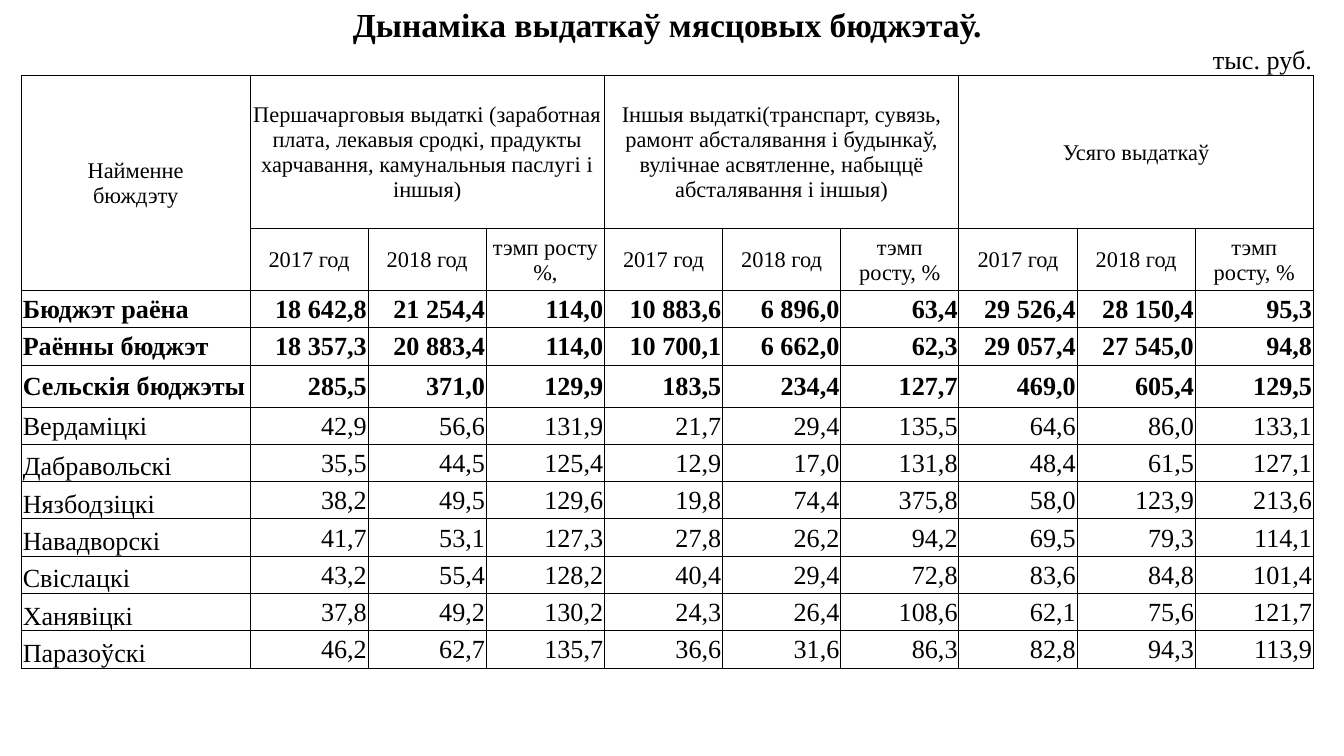
from lxml.etree import SubElement
from pptx import Presentation
from pptx.dml.color import RGBColor
from pptx.enum.text import MSO_ANCHOR, PP_ALIGN
from pptx.oxml.ns import qn
from pptx.util import Pt

COLORS = {"text": "000000", "border": "000000"}
FONT = "Times New Roman"
NO_STYLE = "{2D5ABB26-0587-4C30-8999-92F81FD0307C}"
NAME_WIDTH, VALUE_WIDTH = 122.4, 63.3
ROW_HEIGHTS = [21.6, 16.6, 82, 33.2, 20, 20, 22.5] + [20] * 7
TITLE = "Дынаміка выдаткаў мясцовых бюджэтаў."
UNIT = "тыс. руб."
NAME_HEADER = "Найменне\nбюждэту"
GROUPS = [
    "Першачарговыя выдаткі (заработная плата, лекавыя сродкі, "
    "прадукты харчавання, камунальныя паслугі і іншыя)",
    "Іншыя выдаткі(транспарт, сувязь, рамонт абсталявання і будынкаў, "
    "вулічнае асвятленне, набыццё абсталявання і іншыя)",
    "Усяго выдаткаў",
]
GROWTH = ["тэмп росту %,", "тэмп\nросту, %", "тэмп\nросту, %"]
TOTAL_ROWS = 3
BUDGETS = [
    "Бюджэт раёна|18 642,8|21 254,4|114,0|10 883,6|6 896,0|63,4|29 526,4|28 150,4|95,3",
    "Раённы бюджэт|18 357,3|20 883,4|114,0|10 700,1|6 662,0|62,3|29 057,4|27 545,0|94,8",
    "Сельскія бюджэты|285,5|371,0|129,9|183,5|234,4|127,7|469,0|605,4|129,5",
    "Вердаміцкі|42,9|56,6|131,9|21,7|29,4|135,5|64,6|86,0|133,1",
    "Дабравольскі|35,5|44,5|125,4|12,9|17,0|131,8|48,4|61,5|127,1",
    "Нязбодзіцкі|38,2|49,5|129,6|19,8|74,4|375,8|58,0|123,9|213,6",
    "Навадворскі|41,7|53,1|127,3|27,8|26,2|94,2|69,5|79,3|114,1",
    "Свіслацкі|43,2|55,4|128,2|40,4|29,4|72,8|83,6|84,8|101,4",
    "Ханявіцкі|37,8|49,2|130,2|24,3|26,4|108,6|62,1|75,6|121,7",
    "Паразоўскі|46,2|62,7|135,7|36,6|31,6|86,3|82,8|94,3|113,9",
]


def set_text(cell, text, size, align=PP_ALIGN.CENTER, bold=False, anchor=MSO_ANCHOR.MIDDLE):
    """Write and format the text of one cell."""
    cell.vertical_anchor = anchor
    tf = cell.text_frame
    tf.text = text
    for p in tf.paragraphs:
        p.alignment = align
        for r in p.runs:
            r.font.name = FONT
            r.font.size = Pt(size)
            r.font.bold = bold
            r.font.color.rgb = RGBColor.from_string(COLORS["text"])


def set_borders(cell, sides):
    """Draw thin lines on the given sides of a cell."""
    tc_pr = cell._tc.get_or_add_tcPr()
    for side in sides:
        ln = SubElement(tc_pr, qn(f"a:ln{side}"), w=str(Pt(0.5)))
        fill = SubElement(ln, qn("a:solidFill"))
        SubElement(fill, qn("a:srgbClr"), val=COLORS["border"])


def add_grid(s):
    """Add the unstyled table with its sizes, margins and borders."""
    width = NAME_WIDTH + 9 * VALUE_WIDTH
    shape = s.shapes.add_table(len(ROW_HEIGHTS), 10, Pt(11.5), Pt(2.2),
                               Pt(width), Pt(sum(ROW_HEIGHTS)))
    table = shape.table
    table.first_row = table.horz_banding = False
    table._tbl.tblPr.find(qn("a:tableStyleId")).text = NO_STYLE
    for i, column in enumerate(table.columns):
        column.width = Pt(VALUE_WIDTH if i else NAME_WIDTH)
    for i, row in enumerate(table.rows):
        row.height = Pt(ROW_HEIGHTS[i])
        for cell in row.cells:
            cell.margin_left = cell.margin_right = cell.margin_top = Pt(0.7)
            cell.margin_bottom = 0
            set_borders(cell, ["", "B", "LRTB"][min(i, 2)])
            cell.fill.background()
    return table


def fill_caption(table):
    """Fill the title row and the unit row."""
    table.cell(0, 0).merge(table.cell(0, 9))
    set_text(table.cell(0, 0), TITLE, 18, bold=True, anchor=MSO_ANCHOR.BOTTOM)
    for col in (1, 3, 5):
        table.cell(1, col).merge(table.cell(1, col + 1))
    for col in range(9):
        p = table.cell(1, col).text_frame.paragraphs[0]
        SubElement(p._p, qn("a:endParaRPr"), sz="800")
    set_text(table.cell(1, 9), UNIT, 14, PP_ALIGN.RIGHT, anchor=MSO_ANCHOR.BOTTOM)


def fill_header(table):
    """Fill the two header rows."""
    table.cell(2, 0).merge(table.cell(3, 0))
    set_text(table.cell(2, 0), NAME_HEADER, 12)
    for i, (group, growth) in enumerate(zip(GROUPS, GROWTH)):
        col = 1 + 3 * i
        table.cell(2, col).merge(table.cell(2, col + 2))
        set_text(table.cell(2, col), group, 12)
        for j, label in enumerate(["2017 год", "2018 год", growth]):
            set_text(table.cell(3, col + j), label, 12)


def fill_budgets(table):
    """Fill the budget rows, totals in bold."""
    for i, line in enumerate(BUDGETS):
        name, *values = line.split("|")
        bold = i < TOTAL_ROWS
        anchor = MSO_ANCHOR.BOTTOM if i > TOTAL_ROWS else MSO_ANCHOR.MIDDLE
        set_text(table.cell(4 + i, 0), name, 14, PP_ALIGN.LEFT, bold, anchor)
        for col, value in enumerate(values, 1):
            set_text(table.cell(4 + i, col), value, 14, PP_ALIGN.RIGHT, bold)


def main():
    """Build and save the slide."""
    prs = Presentation()
    prs.slide_width, prs.slide_height = Pt(720), Pt(405)
    s = prs.slides.add_slide(prs.slide_layouts[6])
    table = add_grid(s)
    fill_caption(table)
    fill_header(table)
    fill_budgets(table)
    prs.save("out.pptx")


if __name__ == "__main__":
    main()
